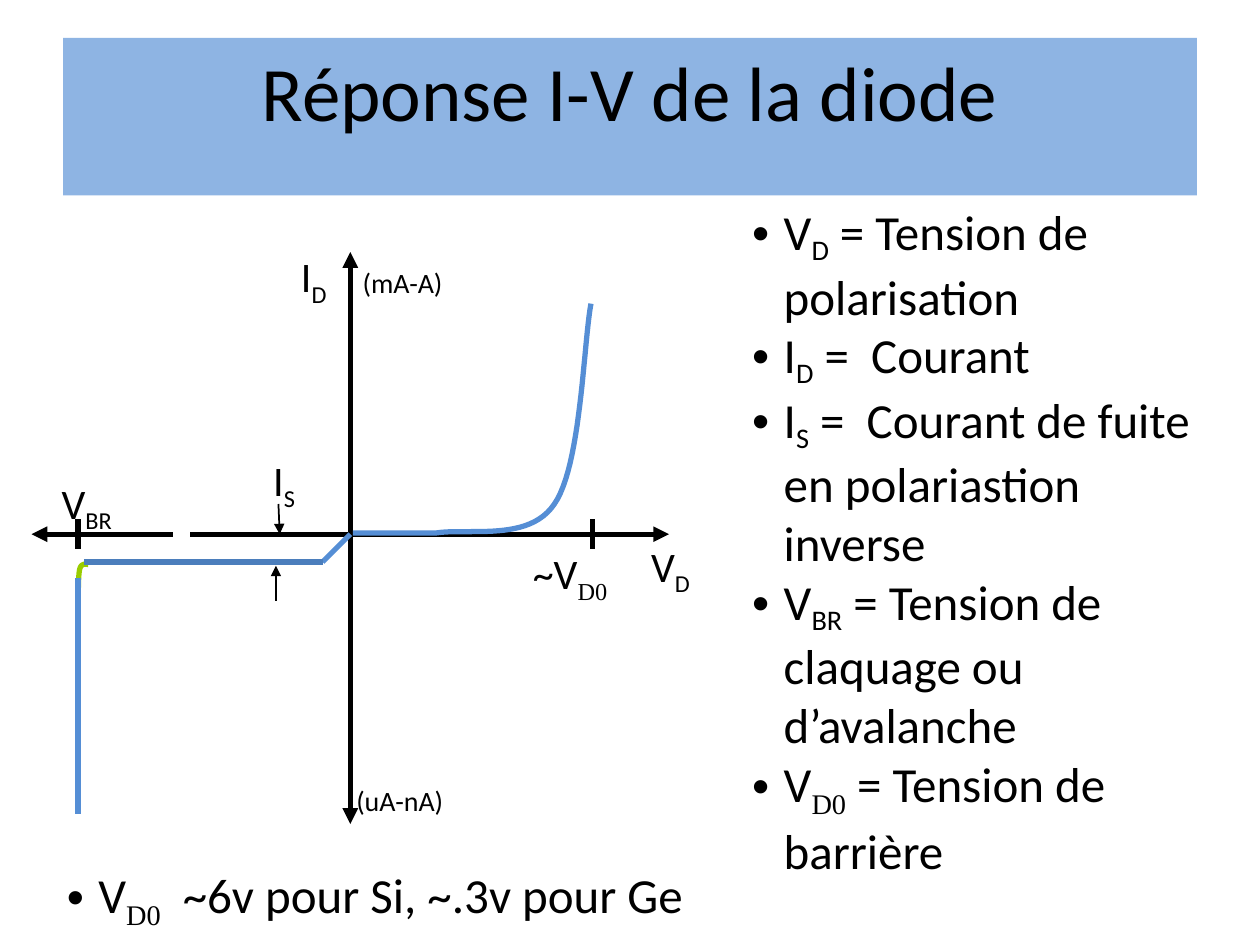
from dataclasses import dataclass

from lxml import etree
from pptx import Presentation
from pptx.dml.color import RGBColor
from pptx.enum.shapes import MSO_CONNECTOR
from pptx.enum.text import MSO_ANCHOR, MSO_AUTO_SIZE, PP_ALIGN
from pptx.oxml.ns import qn
from pptx.util import Inches, Pt

STRAIGHT = MSO_CONNECTOR.STRAIGHT
TOP = MSO_ANCHOR.TOP
NO_AUTOFIT = MSO_AUTO_SIZE.NONE
CENTER = PP_ALIGN.CENTER

COLORS = {
    "text": "000000",
    "axis": "000000",
    "banner": "8EB4E3",
    "curve": "558ED5",
    "leakage": "4B7EBC",
    "knee": "99CC00",
}
FONT = "Calibri"
SERIF = "Times New Roman"
ORIGIN_X, AXIS_Y = 2.78, 4.24
BREAKDOWN_X, BARRIER_X = 0.62, 4.7
LEAKAGE_Y, LEAKAGE_END_X = 4.46, 2.56
TICK = 0.12
CURVE_STEPS = 24

Point = tuple[float, float]
Box = tuple[float, float, float, float]


@dataclass
class Term:
    symbol: str
    subscript: str = ""
    meaning: str = ""
    subscript_font: str = FONT
    drop: int = -25


@dataclass
class Label:
    term: Term
    box: Box
    size: int = 24


@dataclass
class Line:
    start: Point
    end: Point
    color: str = "axis"
    width: float = 3
    arrow: bool = False


@dataclass
class Curve:
    start: Point
    segments: list[tuple[Point, Point, Point]]
    color: str


DEFINITIONS = [
    Term("V", "D", " = Tension de polarisation", drop=-20),
    Term("I", "D", " =  Courant", drop=-20),
    Term("I", "S", " =  Courant de fuite en polariastion inverse", drop=-20),
    Term("V", "BR", " = Tension de claquage ou d’avalanche", drop=-20),
    Term("V", "D0", " = Tension de barrière", SERIF),
]
BARRIER_VALUES = [Term("V", "D0", "  ~6v pour Si, ~.3v pour Ge", SERIF)]

LABELS = [
    Label(Term("V", "D"), (5.07, 4.24, 0.64, 0.5)),
    Label(Term("I", "D"), (2.29, 1.94, 0.49, 0.5)),
    Label(Term("(mA-A)"), (2.78, 2.06, 0.96, 0.37), 16),
    Label(Term("(uA-nA)"), (2.73, 6.17, 1.17, 0.37), 16),
    Label(Term("V", "BR"), (0.39, 3.74, 0.81, 0.5)),
    Label(Term("~V", "D0", subscript_font=SERIF), (4.13, 4.3, 0.85, 0.77)),
    Label(Term("I", "S"), (2.07, 3.56, 0.49, 0.5)),
]

ORIGIN = (ORIGIN_X, AXIS_Y)
AXES = [
    Line(ORIGIN, (ORIGIN_X, 2), arrow=True),
    Line(ORIGIN, (ORIGIN_X, 6.54), arrow=True),
    Line(ORIGIN, (5.31, AXIS_Y), arrow=True),
    Line((1.37, AXIS_Y), (0.25, AXIS_Y), arrow=True),
    Line(ORIGIN, (1.51, AXIS_Y)),
]
TICKS = [Line((x, AXIS_Y - TICK), (x, AXIS_Y + TICK)) for x in (BREAKDOWN_X, BARRIER_X)]
LEAKAGE_ARROWS = [
    Line((2.19, 4.77), (2.19, 4.49), width=1, arrow=True),
    Line((2.21, 4), (2.22, AXIS_Y), width=1, arrow=True),
]
REVERSE_RESPONSE = [
    Line(ORIGIN, (LEAKAGE_END_X, LEAKAGE_Y), "curve"),
    Line((BREAKDOWN_X, 4.59), (BREAKDOWN_X, 6.46), "curve"),
    Line((0.67, LEAKAGE_Y), (LEAKAGE_END_X, LEAKAGE_Y), "leakage"),
]
FORWARD_CURVE = Curve(
    (2.8, 4.23),
    [
        ((2.8, 4.23), (3.46, 4.23), (3.46, 4.23)),
        ((3.73, 4.19), (4.2, 4.3), (4.4, 4)),
        ((4.61, 3.7), (4.63, 2.74), (4.69, 2.41)),
    ],
    "curve",
)
BREAKDOWN_KNEE = Curve(
    (0.7, 4.48),
    [
        ((0.69, 4.48), (0.64, 4.46), (0.63, 4.53)),
        ((0.62, 4.59), (0.62, 4.8), (0.62, 4.87)),
    ],
    "knee",
)


def rgb(name: str) -> RGBColor:
    return RGBColor.from_string(COLORS[name])


def place(shape, box: Box) -> None:
    shape.left, shape.top, shape.width, shape.height = map(Inches, box)


def write_term(paragraph, term: Term, size: int) -> None:
    paragraph.font.name = FONT
    paragraph.font.size = Pt(size)
    paragraph.font.color.rgb = rgb("text")
    paragraph.add_run().text = term.symbol
    if term.subscript:
        run = paragraph.add_run()
        run.text = term.subscript
        run.font.name = term.subscript_font
        run._r.get_or_add_rPr().set("baseline", str(term.drop * 1000))
    if term.meaning:
        paragraph.add_run().text = term.meaning


def fill_list(placeholder, box: Box, terms: list[Term]) -> None:
    place(placeholder, box)
    frame = placeholder.text_frame
    frame.auto_size = NO_AUTOFIT
    for index, term in enumerate(terms):
        paragraph = frame.add_paragraph() if index else frame.paragraphs[0]
        paragraph.space_before = Pt(0)
        properties = paragraph._p.get_or_add_pPr()
        properties.set("marL", str(Inches(0.25)))
        properties.set("indent", str(-Inches(0.25)))
        etree.SubElement(properties, qn("a:buChar")).set("char", "•")
        write_term(paragraph, term, 28)


def draw_label(slide, label: Label) -> None:
    frame = slide.shapes.add_textbox(*map(Inches, label.box)).text_frame
    frame.word_wrap = True
    write_term(frame.paragraphs[0], label.term, label.size)


def draw_line(slide, line: Line) -> None:
    ends = map(Inches, (*line.start, *line.end))
    connector = slide.shapes.add_connector(STRAIGHT, *ends)
    connector.line.color.rgb = rgb(line.color)
    connector.line.width = Pt(line.width)
    if line.arrow:
        outline = connector.line._get_or_add_ln()
        etree.SubElement(outline, qn("a:tailEnd")).set("type", "triangle")
    etree.SubElement(connector._element.spPr, qn("a:effectLst"))


def bezier(p0: Point, p1: Point, p2: Point, p3: Point, t: float) -> Point:
    u = 1 - t
    weights = (u**3, 3 * u * u * t, 3 * u * t * t, t**3)
    x, y = (sum(w * v for w, v in zip(weights, axis)) for axis in zip(p0, p1, p2, p3))
    return Inches(x), Inches(y)


def draw_curve(slide, curve: Curve) -> None:
    builder = slide.shapes.build_freeform(*map(Inches, curve.start))
    start = curve.start
    for segment in curve.segments:
        steps = range(1, CURVE_STEPS + 1)
        points = [bezier(start, *segment, step / CURVE_STEPS) for step in steps]
        builder.add_line_segments(points, close=False)
        start = segment[-1]
    shape = builder.convert_to_shape()
    shape.shadow.inherit = False
    shape.fill.background()
    shape.line.color.rgb = rgb(curve.color)
    shape.line.width = Pt(3)


def main() -> None:
    presentation = Presentation()
    presentation.slide_width, presentation.slide_height = Inches(10), Inches(7.5)
    slide = presentation.slides.add_slide(presentation.slide_layouts[3])
    title, definitions, barrier_values = slide.placeholders

    place(title, (0.5, 0.3, 9, 1.25))
    title.fill.solid()
    title.fill.fore_color.rgb = rgb("banner")
    title.text_frame.vertical_anchor = TOP
    title.text_frame.auto_size = NO_AUTOFIT
    heading = title.text_frame.paragraphs[0]
    heading.alignment = CENTER
    write_term(heading, Term("Réponse I-V de la diode"), 44)

    fill_list(definitions, (5.87, 1.55, 3.94, 5.28), DEFINITIONS)
    fill_list(barrier_values, (0.43, 6.81, 8.74, 0.57), BARRIER_VALUES)
    for line in AXES + TICKS + LEAKAGE_ARROWS:
        draw_line(slide, line)
    for curve in (FORWARD_CURVE, BREAKDOWN_KNEE):
        draw_curve(slide, curve)
    for line in REVERSE_RESPONSE:
        draw_line(slide, line)
    for label in LABELS:
        draw_label(slide, label)
    presentation.save("out.pptx")


if __name__ == "__main__":
    main()
